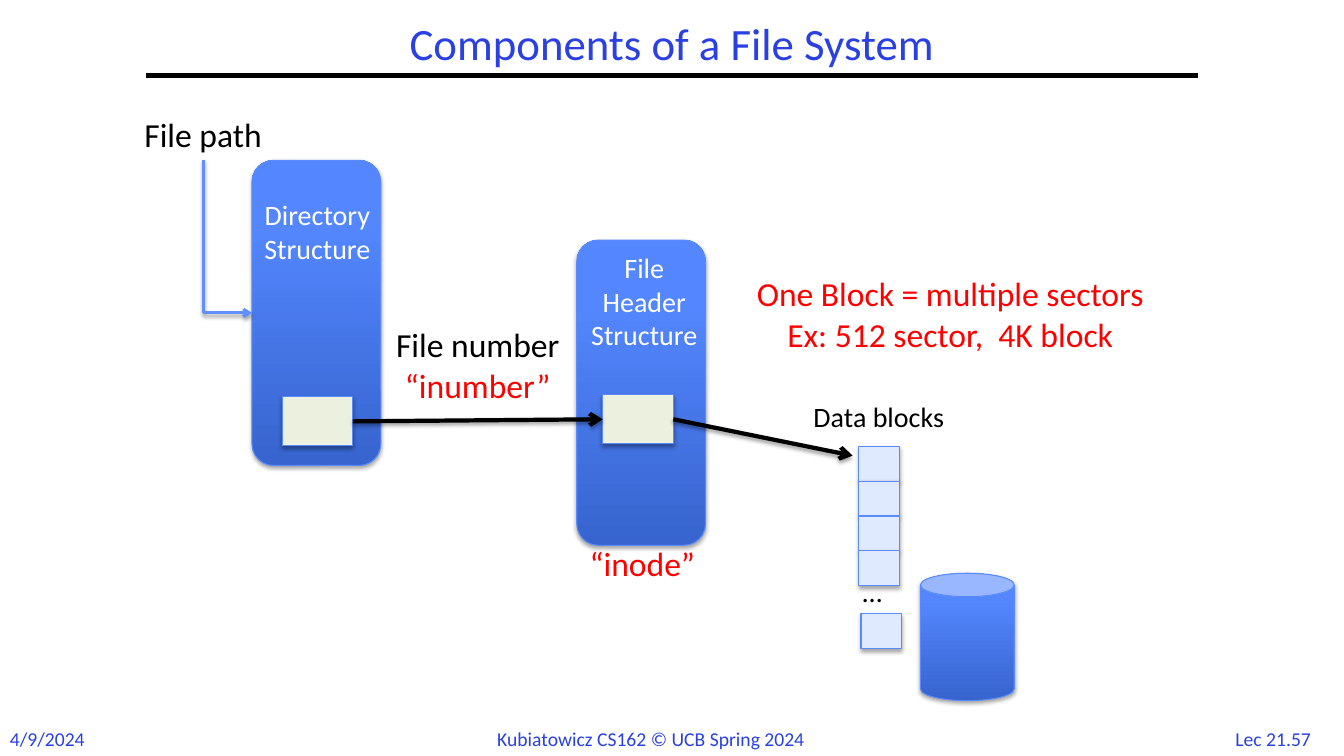
from pptx import Presentation
from pptx.dml.color import RGBColor
from pptx.enum.shapes import MSO_CONNECTOR, MSO_SHAPE
from pptx.enum.text import MSO_ANCHOR, MSO_AUTO_SIZE, PP_ALIGN
from pptx.oxml import parse_xml
from pptx.oxml.ns import nsdecls, qn
from pptx.util import Pt

BLUE = RGBColor(0x2A, 0x40, 0xE2)
BLACK = RGBColor(0, 0, 0)
WHITE = RGBColor(255, 255, 255)
RED = RGBColor(255, 0, 0)
DARK = RGBColor(0x37, 0x64, 0xCE)
LIGHT = RGBColor(0x54, 0x87, 0xFF)
EDGE = RGBColor(0x5B, 0x8A, 0xFB)
BEND = RGBColor(0x61, 0x8F, 0xFD)
CREAM = RGBColor(0xEB, 0xF1, 0xDE)
PALE = RGBColor(0xDF, 0xE9, 0xFF)

LEFT, MID = PP_ALIGN.LEFT, PP_ALIGN.CENTER


def points(*values):
    return [Pt(value) for value in values]


def add_text(slide, area, lines, size, color, align=LEFT):
    """Add a text box with one paragraph per line."""
    box = slide.shapes.add_textbox(*points(*area))
    frame = box.text_frame
    frame.word_wrap = False
    frame.auto_size = MSO_AUTO_SIZE.SHAPE_TO_FIT_TEXT
    frame.text = "\n".join(lines)
    for para in frame.paragraphs:
        para.alignment = align
        para.font.color.rgb = color
        style = {"name": "Calibri", "size": Pt(size)}
        for key, value in style.items():
            setattr(para.font, key, value)
    return frame


def add_shade(effects, dist, alpha):
    """Put a soft shadow below the element."""
    effects.append(parse_xml(
        f'<a:outerShdw {nsdecls("a")} blurRad="{Pt(3.1)}" dist="{Pt(dist)}" '
        f'dir="5400000" rotWithShape="0"><a:srgbClr val="000000">'
        f'<a:alpha val="{alpha * 1000}"/></a:srgbClr></a:outerShdw>'))


def add_shape(slide, kind, area, color=None):
    """Add a shape, with the blue gradient when no color is given."""
    shape = slide.shapes.add_shape(kind, *points(*area))
    if color:
        shape.fill.solid()
        shape.fill.fore_color.rgb = color
    else:
        shape.fill.gradient()
        shape.fill.gradient_angle = 90
        stops = zip(shape.fill.gradient_stops, (DARK, LIGHT), (0, 0.8))
        for stop, tone, place in stops:
            stop.color.rgb = tone
            stop.position = place
    shape.line.color.rgb = EDGE
    shape.line.width = Pt(0.75)
    shape.shadow.inherit = False
    add_shade(shape._element.spPr.find(qn("a:effectLst")), 1.8, 35)
    return shape


def add_line(slide, ends, color, width, arrow=True, kind=MSO_CONNECTOR.STRAIGHT):
    """Add a connector; arrows also carry a shadow."""
    line = slide.shapes.add_connector(kind, *points(*ends))
    line.line.color.rgb = color
    line.line.width = Pt(width)
    effects = parse_xml(f'<a:effectLst {nsdecls("a")}/>')
    line._element.spPr.append(effects)
    if arrow:
        head = parse_xml(f'<a:tailEnd {nsdecls("a")} type="arrow"/>')
        line.line._get_or_add_ln().append(head)
        add_shade(effects, 1.6, 38)
    return line


def add_bend(slide, ends, color, width):
    """Add an arrow that runs down, then right."""
    left, top, right, low = ends
    x, y = (left + right) / 2, (top + low) / 2
    half, rise = (low - top) / 2, (right - left) / 2
    turned = (x + half, y - rise, x - half, y + rise)
    line = add_line(slide, turned, color, width, kind=MSO_CONNECTOR.ELBOW)
    props = line._element.spPr
    props.find(qn("a:xfrm")).set("rot", "16200000")
    props.find(qn("a:prstGeom")).set("prst", "bentConnector2")


def add_frame(slide):
    """Add the title, its rule and the footer."""
    title = add_text(slide, (104, 12, 752, 42),
                     ["Components of a File System"], 32, BLUE, MID)
    title.auto_size = MSO_AUTO_SIZE.NONE
    title.word_wrap = True
    title.vertical_anchor = MSO_ANCHOR.MIDDLE
    title.paragraphs[0].line_spacing = 0.9
    add_line(slide, (104, 54, 856, 54), BLACK, 3, arrow=False)
    footer = (
        (0, 69, "4/9/2024", LEFT),
        (348, 265, "Kubiatowicz CS162 © UCB Spring 2024", LEFT),
        (870.5, 78, "Lec 21.57", MID),
    )
    for left, width, text, align in footer:
        add_text(slide, (left, 515.5, width, 24), [text], 14, BLUE, align)


def main():
    deck = Presentation()
    deck.slide_width, deck.slide_height = points(960, 540)
    slide = deck.slides.add_slide(deck.slide_layouts[6])
    add_frame(slide)

    # Directory and file header, each with an entry
    for left, top in ((180, 114.5), (412, 171.5)):
        add_shape(slide, MSO_SHAPE.ROUNDED_RECTANGLE, (left, top, 92, 218))
    entry, inode = [
        add_shape(slide, MSO_SHAPE.RECTANGLE, (left, top, 50.5, 35), CREAM)
        for left, top in ((201.5, 283.5), (430.5, 282))]

    # Data blocks and disk
    cells = [(613.5, 319 + 24.8 * row) for row in range(4)] + [(615, 438.5)]
    for left, top in cells:
        add_shape(slide, MSO_SHAPE.RECTANGLE, (left, top, 29, 25), PALE)
    add_shape(slide, MSO_SHAPE.CAN, (657.5, 409.5, 67, 91))

    # Arrows
    add_bend(slide, (145.5, 114.5, 180, 223.5), BEND, 2)
    number = add_line(slide, (252, 301, 430.5, 299.5), BLACK, 3)
    number.begin_connect(entry, 3)
    number.end_connect(inode, 1)
    block = add_line(slide, (481, 299.5, 609, 325.5), BLACK, 3)
    block.begin_connect(inode, 3)

    # Labels
    labels = (
        ((96, 78, 107, 36), ["File path"], 24, BLACK, LEFT),
        ((178.5, 137.5, 96.5, 55.5), ["Directory", "Structure"], 20, WHITE, MID),
        ((412, 175.5, 96.5, 80), ["File", "Header", "Structure"], 20, WHITE, MID),
        ((270, 228, 142.5, 36), ["File number"], 24, BLACK, MID),
        ((281.5, 257, 119.5, 36), ["“inumber”"], 24, RED, MID),
        ((414, 384, 90, 36), ["“inode”"], 24, RED, LEFT),
        ((574, 282, 120, 31.5), ["Data blocks"], 20, BLACK, LEFT),
        ((609, 407, 34.5, 31.5), ["…"], 20, BLACK, LEFT),
        ((517.5, 191.5, 322.5, 65.5),
         ["One Block = multiple sectors", "Ex: 512 sector,  4K block"], 24, RED, MID),
    )
    for label in labels:
        add_text(slide, *label)

    deck.save("out.pptx")


if __name__ == "__main__":
    main()
